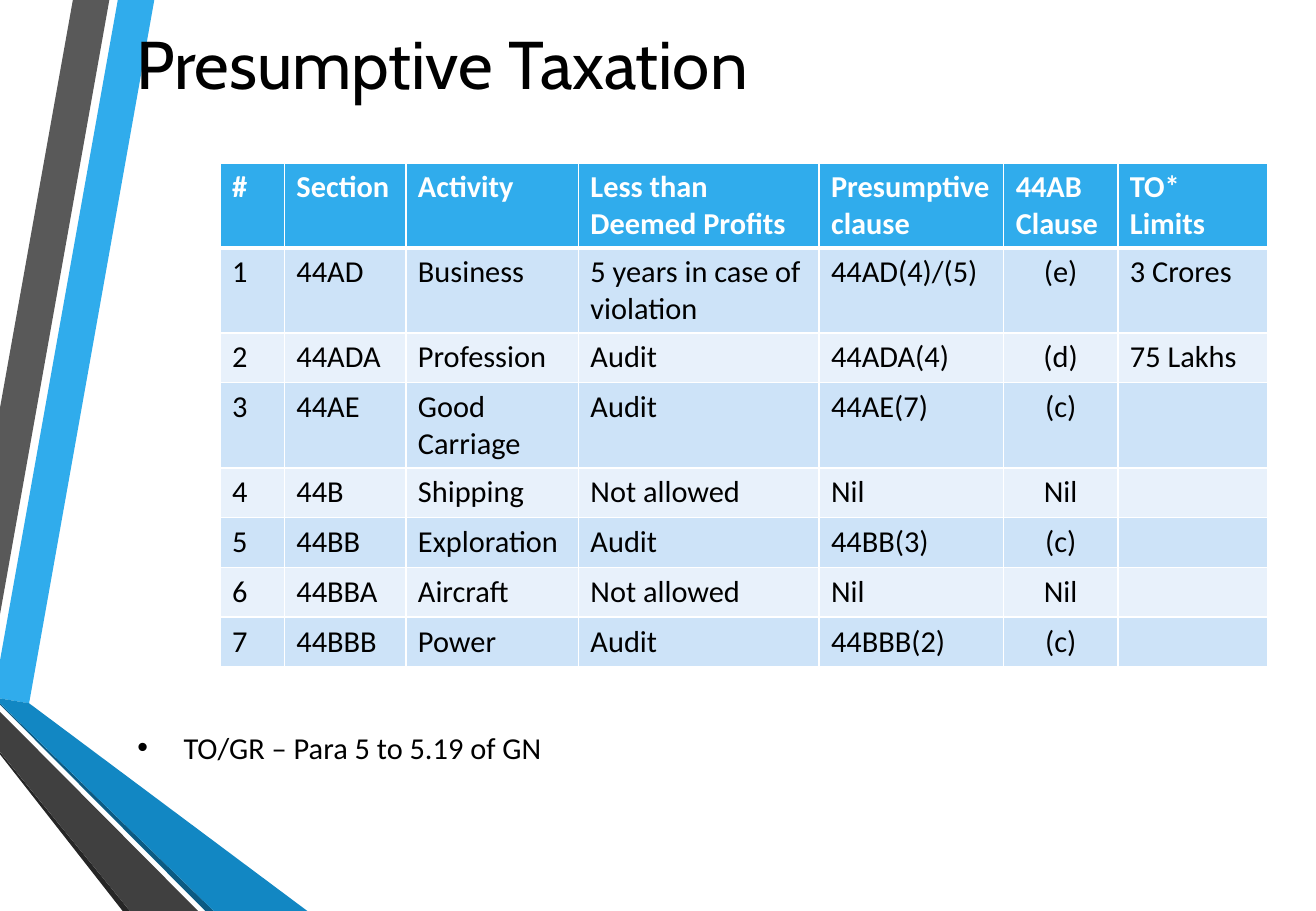
from lxml.etree import SubElement
from pptx import Presentation
from pptx.dml.color import RGBColor
from pptx.enum.text import MSO_ANCHOR, PP_ALIGN
from pptx.oxml.ns import qn
from pptx.util import Emu, Pt

SCALE = 9144
BLUE, WHITE, BLACK = "30ACEC", "FFFFFF", "000000"
BANDS = ["E8F1FB", "CDE3F8"]

RIBBONS = [
    (BLUE, [(0, 544), (0, 575), (24, 579), (127, 0), (97, 0)]),
    ("595959", [(90, 0), (60, 0), (0, 336), (0, 506)]),
    ("262626", [(0, 619), (0, 621), (101, 750), (107, 750)]),
    ("0C5A82", [(0, 579), (0, 580), (169, 750), (176, 750)]),
    ("1287C3", [(0, 579), (176, 750), (253, 750), (24, 579), (0, 575)]),
    ("404040", [(0, 619), (107, 750), (163, 750), (0, 586)]),
]
COLUMN_WIDTHS = [53, 100, 142, 198, 152, 94, 123]
ROW_HEIGHTS = [69, 69, 41, 69, 41, 41, 41, 41]
CENTERED_COLUMN = 5
SECTIONS = [
    ["#", "Section", "Activity", "Less than Deemed Profits",
     "Presumptive clause", "44AB Clause", "TO* Limits"],
    ["1", "44AD", "Business", "5 years in case of violation", "44AD(4)/(5)", "(e)", "3 Crores"],
    ["2", "44ADA", "Profession", "Audit", "44ADA(4)", "(d)", "75 Lakhs"],
    ["3", "44AE", "Good Carriage", "Audit", "44AE(7)", "(c)", ""],
    ["4", "44B", "Shipping", "Not allowed", "Nil", "Nil", ""],
    ["5", "44BB", "Exploration", "Audit", "44BB(3)", "(c)", ""],
    ["6", "44BBA", "Aircraft", "Not allowed", "Nil", "Nil", ""],
    ["7", "44BBB", "Power", "Audit", "44BBB(2)", "(c)", ""],
]


def px(length):
    return Emu(length * SCALE)


def color(value):
    return RGBColor.from_string(value)


class SlideBuilder:
    """Draws styled elements on the current slide."""

    def __init__(self, slide, font="Calibri", size=18):
        self.slide = slide
        self.font = font
        self.size = size

    def style(self, paragraph, fill, bold=False, font=None, size=None):
        for run in paragraph.runs:
            run.font.name = font or self.font
            run.font.size = Pt(size or self.size)
            run.font.bold = bold
            run.font.color.rgb = color(fill)

    def ribbon(self, fill, points):
        builder = self.slide.shapes.build_freeform(*points[0], scale=SCALE)
        builder.add_line_segments(points[1:], close=True)
        shape = builder.convert_to_shape()
        shape.shadow.inherit = False
        shape.fill.solid()
        shape.fill.fore_color.rgb = color(fill)
        shape.line.fill.background()

    def text(self, box, text, inset_top, anchor=MSO_ANCHOR.TOP, **style):
        frame = self.slide.shapes.add_textbox(*map(px, box)).text_frame
        frame.word_wrap = True
        frame.vertical_anchor = anchor
        frame.margin_left = frame.margin_right = frame.margin_bottom = 0
        frame.margin_top = px(inset_top)
        frame.text = text
        paragraph = frame.paragraphs[0]
        self.style(paragraph, BLACK, **style)
        return paragraph

    def bullet(self, box, text):
        paragraph = self.text(box, text, 6)
        paragraph.line_spacing = 1.5
        paragraph.space_before = Pt(4.2)
        properties = paragraph._p.get_or_add_pPr()
        properties.set("marL", str(px(39)))
        properties.set("indent", str(px(-38)))
        SubElement(properties, qn("a:buFont"), typeface="Arial")
        SubElement(properties, qn("a:buChar"), char="•")

    def borders(self, cell, row):
        widths = {"L": 1, "R": 1, "T": 3 if row == 1 else 1, "B": 3 if row == 0 else 1}
        properties = cell._tc.get_or_add_tcPr()
        for side, width in widths.items():
            line = SubElement(properties, qn(f"a:ln{side}"), w=str(Pt(width)))
            SubElement(SubElement(line, qn("a:solidFill")), qn("a:srgbClr"), val=WHITE)

    def cell(self, cell, text, row, column):
        header = row == 0
        cell.text = text
        paragraph = cell.text_frame.paragraphs[0]
        self.style(paragraph, WHITE if header else BLACK, bold=header)
        if column == CENTERED_COLUMN and not header:
            paragraph.alignment = PP_ALIGN.CENTER
        self.borders(cell, row)
        cell.fill.solid()
        cell.fill.fore_color.rgb = color(BLUE if header else BANDS[row % 2])

    def table(self, left, top, rows):
        box = (left, top, sum(COLUMN_WIDTHS), sum(ROW_HEIGHTS))
        table = self.slide.shapes.add_table(len(rows), len(rows[0]), *map(px, box)).table
        for column, width in zip(table.columns, COLUMN_WIDTHS):
            column.width = px(width)
        for row, height in zip(table.rows, ROW_HEIGHTS):
            row.height = px(height)
        for row, texts in enumerate(rows):
            for column, text in enumerate(texts):
                self.cell(table.cell(row, column), text, row, column)


def main():
    presentation = Presentation()
    presentation.slide_width, presentation.slide_height = px(1083), px(750)
    slide = SlideBuilder(presentation.slides.add_slide(presentation.slide_layouts[6]))
    for fill, points in RIBBONS:
        slide.ribbon(fill, points)
    title = slide.text((112, 0, 529, 102), "Presumptive Taxation", 1,
                       MSO_ANCHOR.MIDDLE, font="Cabin", size=40)
    title.space_before = Pt(1)
    slide.table(181, 134, SECTIONS)
    slide.bullet((112, 579, 908, 47), "TO/GR – Para 5 to 5.19 of GN")
    presentation.save("out.pptx")


if __name__ == "__main__":
    main()
